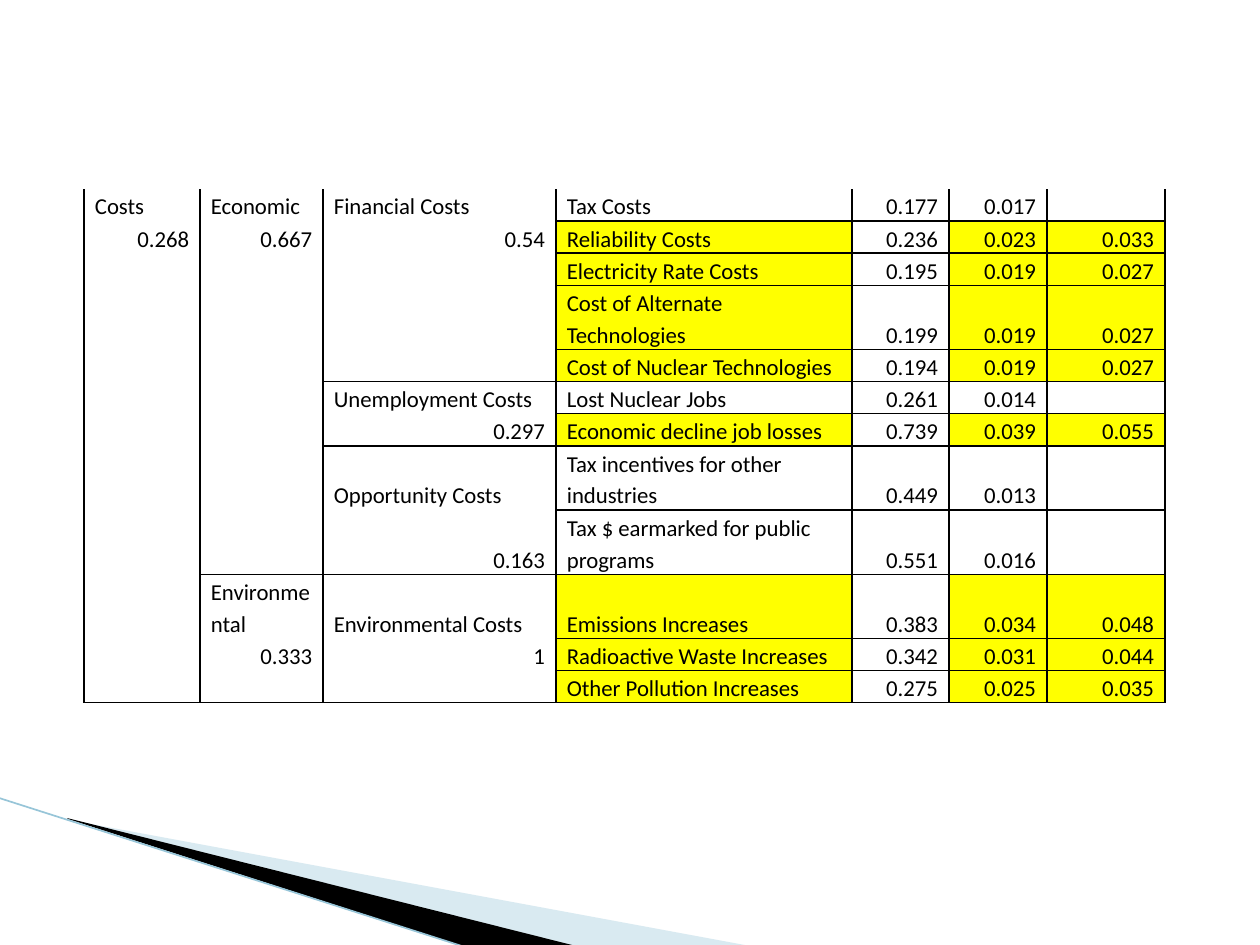
from lxml.etree import SubElement
from pptx import Presentation
from pptx.dml.color import RGBColor
from pptx.enum.shapes import MSO_CONNECTOR
from pptx.enum.text import MSO_ANCHOR, PP_ALIGN
from pptx.oxml.ns import qn
from pptx.util import Emu, Pt

SCALE = 914400 / 126
COLORS = {"ink": "000000", "mark": "FFFF00", "wedge": "A0CBDC", "edge": "97C5D8"}

TABLE_LEFT, TABLE_TOP, TABLE_HEIGHT = 84, 189, 514
COLUMN_WIDTHS = [116, 123, 233, 296, 97, 98, 118]
LINES_PER_ROW = [1, 1, 1, 2, 1, 1, 1, 2, 2, 2, 1, 1]
GROUP_ENDS = [{11}, {8, 11}, {4, 6, 8, 11}]
MARKED_COLUMNS = {3, 5, 6}
ROWS = [
    ["Costs", "Economic", "Financial Costs", "Tax Costs", "0.177", "0.017", ""],
    ["0.268", "0.667", "0.54", "Reliability Costs", "0.236", "0.023", "0.033"],
    ["", "", "", "Electricity Rate Costs", "0.195", "0.019", "0.027"],
    ["", "", "", "Cost of Alternate Technologies", "0.199", "0.019", "0.027"],
    ["", "", "", "Cost of Nuclear Technologies", "0.194", "0.019", "0.027"],
    ["", "", "Unemployment Costs", "Lost Nuclear Jobs", "0.261", "0.014", ""],
    ["", "", "0.297", "Economic decline job losses", "0.739", "0.039", "0.055"],
    ["", "", "Opportunity Costs", "Tax incentives for other industries", "0.449", "0.013", ""],
    ["", "", "0.163", "Tax $ earmarked for public programs", "0.551", "0.016", ""],
    ["", "Environmental", "Environmental Costs", "Emissions Increases", "0.383", "0.034", "0.048"],
    ["", "0.333", "1", "Radioactive Waste Increases", "0.342", "0.031", "0.044"],
    ["", "", "", "Other Pollution Increases", "0.275", "0.025", "0.035"],
]


def px(length):
    return Emu(round(length * SCALE))


def color(name):
    return RGBColor.from_string(COLORS[name])


class SlideBuilder:
    font = "Calibri"
    size = Pt(13)
    spacing = 1.15
    inset = 11

    def __init__(self, page):
        self.page = page

    def wedge(self, points, fill, opacity=100):
        outline = self.page.shapes.build_freeform(*points[0], scale=SCALE)
        outline.add_line_segments(points[1:], close=True)
        shape = outline.convert_to_shape()
        shape.shadow.inherit = False
        shape.line.fill.background()
        shape.fill.solid()
        shape.fill.fore_color.rgb = color(fill)
        if opacity < 100:
            tone = next(shape.element.spPr.iter(qn("a:srgbClr")))
            SubElement(tone, qn("a:alpha"), val=str(opacity * 1000))

    def line(self, start, end, stroke, width):
        connector = self.page.shapes.add_connector(
            MSO_CONNECTOR.STRAIGHT, *map(px, start + end))
        connector.line.color.rgb = color(stroke)
        connector.line.width = Pt(width)
        SubElement(connector.element.spPr, qn("a:effectLst"))

    def borders(self, cell, sides):
        properties = cell._tc.get_or_add_tcPr()
        for side in "LRTB":
            border = SubElement(properties, qn(f"a:ln{side}"), w=str(Pt(1)))
            if side in sides:
                fill = SubElement(border, qn("a:solidFill"))
                SubElement(fill, qn("a:srgbClr"), val=COLORS["ink"])
            else:
                SubElement(border, qn("a:noFill"))

    def cell(self, cell, text, sides, marked):
        self.borders(cell, sides)
        if marked:
            cell.fill.solid()
            cell.fill.fore_color.rgb = color("mark")
        else:
            cell.fill.background()
        cell.vertical_anchor = MSO_ANCHOR.BOTTOM
        cell.margin_left = cell.margin_right = px(self.inset)
        cell.margin_top = cell.margin_bottom = 0
        para = cell.text_frame.paragraphs[0]
        para.line_spacing = self.spacing
        if not text:
            SubElement(para._p, qn("a:endParaRPr"), sz=str(int(self.size.pt * 100)))
            return
        para.alignment = PP_ALIGN.RIGHT if text[0].isdigit() else PP_ALIGN.LEFT
        span = para.add_run()
        span.text = text
        span.font.name = self.font
        span.font.size = self.size
        span.font.color.rgb = color("ink")

    def table(self, rows):
        frame = self.page.shapes.add_table(
            len(rows), len(COLUMN_WIDTHS), px(TABLE_LEFT), px(TABLE_TOP),
            px(sum(COLUMN_WIDTHS)), px(TABLE_HEIGHT))
        table = frame.table
        table.first_row = table.horz_banding = False
        for column, width in zip(table.columns, COLUMN_WIDTHS):
            column.width = px(width)
        for row, lines in zip(table.rows, LINES_PER_ROW):
            row.height = px(TABLE_HEIGHT * lines / sum(LINES_PER_ROW))
        for r, values in enumerate(rows):
            for c, text in enumerate(values):
                ends = GROUP_ENDS[c] if c < len(GROUP_ENDS) else range(len(rows))
                sides = "LR" + "T" * (r - 1 in ends) + "B" * (r in ends)
                marked = c in MARKED_COLUMNS and values[-1] != ""
                self.cell(table.cell(r, c), text, sides, marked)


def main():
    deck = Presentation()
    deck.slide_width, deck.slide_height = px(1260), px(945)
    builder = SlideBuilder(deck.slides.add_slide(deck.slide_layouts[6]))
    builder.wedge([(69, 820), (750, 946), (575, 946), (69, 819)], "wedge", 40)
    builder.wedge([(67, 818), (576, 946), (469, 948), (68, 819)], "ink")
    builder.line((-1, 798), (468, 948), "edge", 0.95)
    builder.table(ROWS)
    deck.save("out.pptx")


if __name__ == "__main__":
    main()
